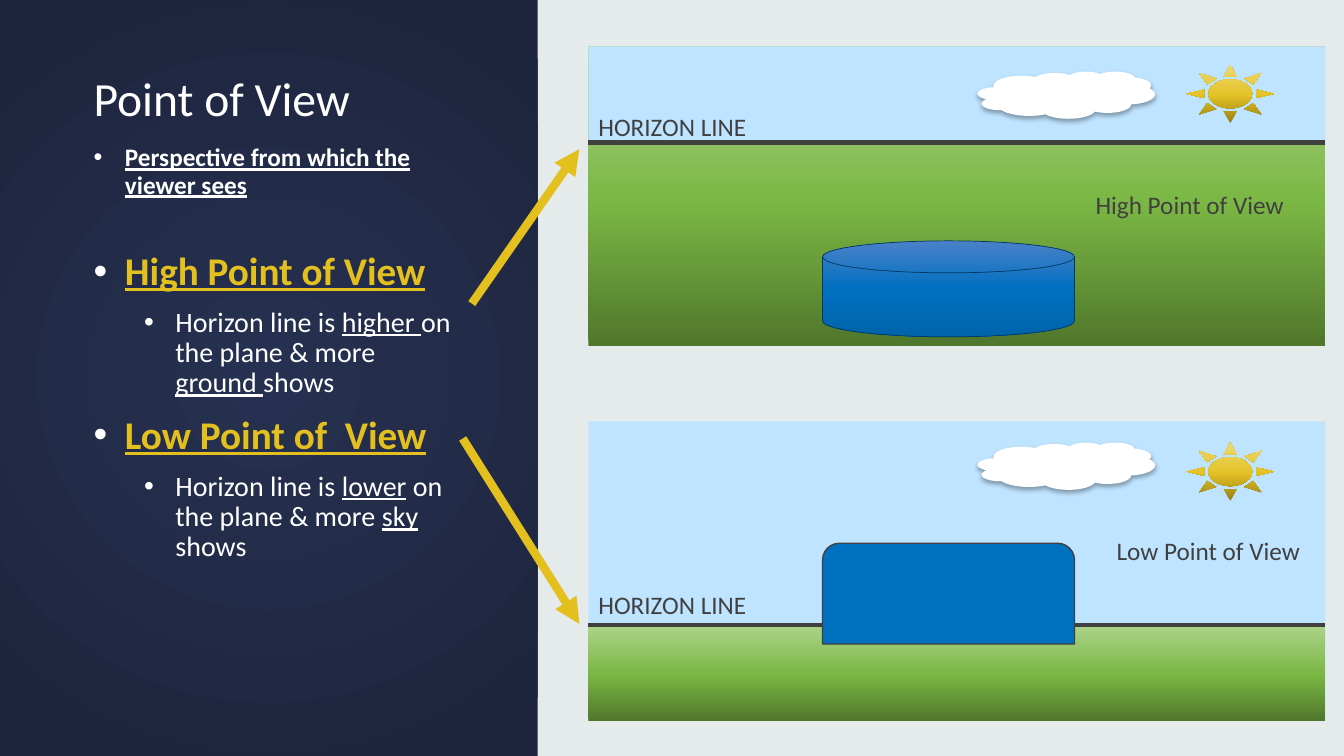
from pptx import Presentation
from pptx.dml.color import RGBColor
from pptx.enum.shapes import MSO_CONNECTOR, MSO_SHAPE
from pptx.enum.text import MSO_ANCHOR
from pptx.oxml.ns import qn
from pptx.util import Cm, Pt
from lxml.etree import SubElement

WHITE, GOLD, DARK, SKY, BLUE = "FFFFFF", "E3C01E", "404040", "BFE4FF", "0070C0"
GRASS = [(0, "50772C"), (48, "7BB744"), (100, "ADD38A")]
SUNSHINE = [(0, "998113"), (48, "E4C225"), (100, "EED978")]
POOL = [(0, "4B81C8"), (50, BLUE), (100, "0064AB")]
NIGHT = [(0, "263050"), (100, "1D243C")]

LABEL = {"size": Pt(18), "name": "Calibri"}
TITLE = {"size": Pt(34), "name": "Calibri"}
DEFINITION = {"size": Pt(18), "name": "Calibri", "bold": True, "underline": True}
HEADING = {"size": Pt(28), "name": "Calibri", "bold": True, "underline": True}
DETAIL = {"size": Pt(20), "name": "Calibri"}
UNDERLINED = {**DETAIL, "underline": True}


def color(value):
    return RGBColor.from_string(value)


def add_xml(parent, tag, **attributes):
    return SubElement(parent, qn(tag), {key: str(item) for key, item in attributes.items()})


def add_gradient(shape, stops, angle):
    """Fill with the stops, along an angle or, when it is None, outward from the centre."""
    shape.fill.gradient()
    gradient = shape._element.spPr.find(qn("a:gradFill"))
    for child in list(gradient):
        gradient.remove(child)
    stop_list = add_xml(gradient, "a:gsLst")
    for position, value in stops:
        stop = add_xml(stop_list, "a:gs", pos=position * 1000)
        add_xml(stop, "a:srgbClr", val=value)
    if angle is None:
        circle = add_xml(gradient, "a:path", path="circle")
        add_xml(circle, "a:fillToRect", l=50000, t=50000, r=50000, b=50000)
    else:
        add_xml(gradient, "a:lin", ang=angle * 60000, scaled=0)


def add_shape(page, kind, box, fill, angle=270, line=None):
    shape = page.shapes.add_shape(kind, *map(Cm, box))
    shape.shadow.inherit = False
    if isinstance(fill, str):
        shape.fill.solid()
        shape.fill.fore_color.rgb = color(fill)
    else:
        add_gradient(shape, fill, angle)
    if line:
        shape.line.color.rgb = color(line[0])
        shape.line.width = Pt(line[1])
    else:
        shape.line.fill.background()
    return shape


def add_line(page, start, end, value, width, arrow=False):
    line = page.shapes.add_connector(MSO_CONNECTOR.STRAIGHT, *map(Cm, start + end))
    line.line.color.rgb = color(value)
    line.line.width = Pt(width)
    if arrow:
        add_xml(line.line._ln, "a:tailEnd", type="triangle")
    add_xml(line._element.spPr, "a:effectLst")


def add_span(para, text, style, value):
    span = para.add_run()
    span.text = text
    for key, item in style.items():
        setattr(span.font, key, item)
    span.font.color.rgb = color(value)


def add_bullet(para, level):
    para.level = level
    para.line_spacing = 0.9
    para.space_before = Pt(10 if level else 12)
    properties = para._p.get_or_add_pPr()
    properties.set("marL", str(Cm(2.06 if level else 0.79)))
    properties.set("indent", str(-Cm(0.79)))
    bullet_color = add_xml(properties, "a:buClr")
    add_xml(bullet_color, "a:srgbClr", val=WHITE)
    add_xml(properties, "a:buFont", typeface="Arial")
    add_xml(properties, "a:buChar", char="•")


def add_text(page, box):
    frame = page.shapes.add_textbox(*map(Cm, box)).text_frame
    frame.word_wrap = True
    return frame


def add_label(page, left, top, text):
    frame = add_text(page, (left, top, 5.51, 1.02))
    add_span(frame.paragraphs[0], text, LABEL, DARK)


def add_bullets(page, box, items):
    frame = add_text(page, box)
    for index, (level, spans) in enumerate(items):
        para = frame.add_paragraph() if index else frame.paragraphs[0]
        add_bullet(para, level)
        for span in spans:
            add_span(para, *span)


def add_notes_panel(page, left, top, width, height):
    """Dark panel with the title, the definition and the two kinds of view."""
    add_shape(page, MSO_SHAPE.RECTANGLE, (left, top, width, height), NIGHT, None)
    text_left = left + 2.11

    # Title
    frame = add_text(page, (text_left, top + 1.33, 8.89, 2))
    frame.vertical_anchor = MSO_ANCHOR.BOTTOM
    frame.paragraphs[0].line_spacing = 0.9
    add_span(frame.paragraphs[0], "Point of View", TITLE, WHITE)

    # Definition
    definition = ("Perspective from which the viewer sees", DEFINITION, WHITE)
    add_bullets(page, (text_left, top + 3.53, 8.89, 1.63), [(0, [definition])])

    # High and low view
    views = [
        ("High Point of View", "higher ", "on the plane & more ", "ground "),
        ("Low Point of  View", "lower", " on the plane & more ", "sky "),
    ]
    items = []
    for heading, place, middle, shown in views:
        items.append((0, [(heading, HEADING, GOLD)]))
        items.append((1, [
            ("Horizon line is ", DETAIL, WHITE), (place, UNDERLINED, WHITE),
            (middle, DETAIL, WHITE), (shown, UNDERLINED, WHITE),
            ("shows", DETAIL, WHITE),
        ]))
    add_bullets(page, (text_left, top + 6.22, 9.75, 9.5), items)


def add_weather(page, left, sun_top, cloud_top):
    add_shape(page, MSO_SHAPE.SUN, (left + 15.07, sun_top, 2.21, 1.47), SUNSHINE)
    cloud = add_shape(page, MSO_SHAPE.CLOUD, (left + 9.81, cloud_top, 4.47, 1.19), WHITE)
    effects = cloud._element.spPr.find(qn("a:effectLst"))
    shadow = add_xml(effects, "a:outerShdw", blurRad=Pt(3.5), dist=Pt(2.2),
                     dir=90 * 60000, rotWithShape=0)
    shade = add_xml(shadow, "a:srgbClr", val="000000")
    add_xml(shade, "a:alpha", val=32000)


def add_horizon(page, left, width, level, label_gap):
    add_line(page, (left, level), (left + width, level), DARK, 3)
    add_label(page, left, level - label_gap, "HORIZON LINE")


def add_high_view(page, left, top, width, height, strip):
    """Ground fills the scene, with a strip of sky at the top."""
    add_shape(page, MSO_SHAPE.RECTANGLE, (left, top, width, height), GRASS)
    add_shape(page, MSO_SHAPE.RECTANGLE, (left, top, width, strip), SKY)
    add_horizon(page, left, width, top + strip, 0.9)
    add_weather(page, left, top + 0.46, top + 0.63)
    add_shape(page, MSO_SHAPE.FLOWCHART_MAGNETIC_DISK, (left + 5.9, top + 4.9, 6.35, 2.42),
              POOL, 90, ("003860", 0.5))
    add_label(page, left + 12.53, top + 3.48, "High Point of View")


def add_low_view(page, left, top, width, height, strip):
    """Sky fills the scene, with a strip of ground at the bottom."""
    level = top + height - strip
    add_shape(page, MSO_SHAPE.RECTANGLE, (left, top, width, height), SKY)
    add_shape(page, MSO_SHAPE.RECTANGLE, (left, level, width, strip), GRASS)
    add_horizon(page, left, width, level, 1.02)
    add_weather(page, left, top + 0.53, top + 0.53)
    add_shape(page, MSO_SHAPE.ROUND_2_SAME_RECTANGLE, (left + 5.9, top + 3.07, 6.35, 2.54),
              BLUE, line=(DARK, 1))
    add_label(page, left + 13.06, top + 2.74, "Low Point of View")


def main():
    deck = Presentation()
    deck.slide_width, deck.slide_height = Cm(33.87), Cm(19.05)
    page = deck.slides.add_slide(deck.slide_layouts[6])
    page.background.fill.solid()
    page.background.fill.fore_color.rgb = color("E5EAEA")

    add_notes_panel(page, 0, 0, 13.55, 19.05)
    add_high_view(page, 14.83, 1.17, 18.57, 7.54, 2.42)
    add_low_view(page, 14.83, 10.62, 18.57, 7.54, 2.42)

    # Arrows from each heading to its horizon
    add_line(page, (11.89, 7.65), (14.6, 3.76), GOLD, 6, arrow=True)
    add_line(page, (11.66, 11.05), (14.6, 15.72), GOLD, 6, arrow=True)
    deck.save("out.pptx")


if __name__ == "__main__":
    main()
